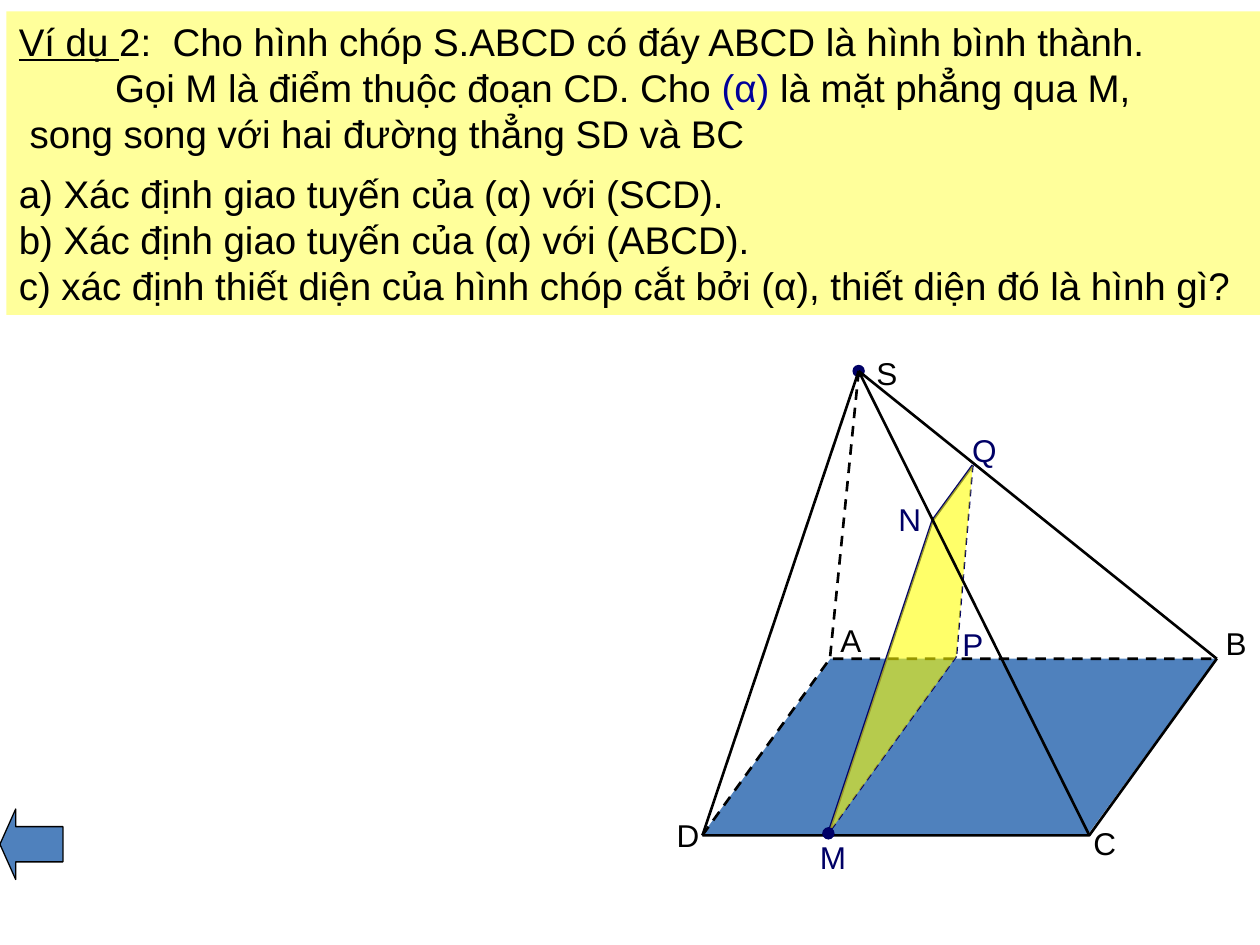
"""Build the slide on a section of the pyramid S.ABCD by a plane."""
from typing import NamedTuple

from lxml import etree
from pptx import Presentation
from pptx.dml.color import RGBColor
from pptx.enum.dml import MSO_LINE
from pptx.enum.shapes import MSO_CONNECTOR, MSO_SHAPE
from pptx.enum.text import MSO_ANCHOR, MSO_AUTO_SIZE, PP_ALIGN
from pptx.oxml.ns import qn
from pptx.util import Cm, Pt

DASH = MSO_LINE.DASH
STRAIGHT = MSO_CONNECTOR.STRAIGHT
RECTANGLE = MSO_SHAPE.RECTANGLE
PARALLELOGRAM = MSO_SHAPE.PARALLELOGRAM
OVAL = MSO_SHAPE.OVAL
LEFT_ARROW = MSO_SHAPE.LEFT_ARROW
TOP = MSO_ANCHOR.TOP
ALIGN_LEFT = PP_ALIGN.LEFT
GROW = MSO_AUTO_SIZE.SHAPE_TO_FIT_TEXT

BLACK, NAVY, BLUE = "000000", "000066", "4F81BD"
FONT = "Arial"


class Point(NamedTuple):
    x: float
    y: float


class Edge(NamedTuple):
    ends: str
    color: str = BLACK
    width: float = 1.5
    dashed: bool = False


class Label(NamedTuple):
    text: str
    left: float
    top: float
    color: str = BLACK
    wrap: bool = False


class Span(NamedTuple):
    text: str
    color: str = BLACK
    underline: bool = False


class Line(NamedTuple):
    spans: tuple[Span, ...]
    indent: float = 0
    spacing: float = 1.0


POINTS = {
    "S": Point(17.31, 7.48), "A": Point(16.73, 13.28), "B": Point(24.53, 13.28),
    "C": Point(21.96, 16.84), "D": Point(14.16, 16.84), "M": Point(16.7, 16.8),
    "N": Point(18.8, 10.49), "P": Point(19.28, 13.23), "Q": Point(19.61, 9.38),
}
BASE_EDGES = (Edge("DAB", dashed=True), Edge("DCB"))
SIDE_EDGES = (Edge("SA", dashed=True), Edge("SD"), Edge("SB"))
SECTION_EDGES = (
    Edge("PM", NAVY, 1, True), Edge("QP", NAVY, 1, True),
    Edge("MN", NAVY), Edge("NQ", NAVY),
)
LABELS = (
    Label("S", 17.42, 7.01, wrap=True), Label("A", 16.69, 12.4),
    Label("B", 24.46, 12.45), Label("C", 21.79, 16.48), Label("D", 13.39, 16.33),
    Label("M", 16.28, 16.76, NAVY), Label("P", 19.15, 12.47, NAVY),
    Label("N", 17.86, 9.96, NAVY), Label("Q", 19.35, 8.56, NAVY),
)
PROBLEM = (
    Line((Span("Ví dụ ", underline=True),
          Span("2:  Cho hình chóp S.ABCD có đáy ABCD là hình bình thành."))),
    Line((Span("Gọi M là điểm thuộc đoạn CD. Cho "), Span("(α)", "000099"),
          Span(" là mặt phẳng qua M,")), indent=1.94),
    Line((Span("song song với hai đường thẳng SD và BC"),), indent=0.22),
    Line((Span("a) Xác định giao tuyến của (α) với (SCD)."),), spacing=1.3),
    Line((Span("b) Xác định giao tuyến của (α) với (ABCD)."),)),
    Line((Span("c) xác định thiết diện của hình chóp cắt bởi (α), "
               "thiết diện đó là hình gì?"),)),
)


def paint(target, color: str) -> None:
    """Give a fill a solid hex colour."""
    target.solid()
    target.fore_color.rgb = RGBColor.from_string(color)


def style_line(line, edge: Edge) -> None:
    """Apply an edge's colour, width and dash."""
    paint(line.fill, edge.color)
    line.width = Pt(edge.width)
    if edge.dashed:
        line.dash_style = DASH


def add_preset(slide, kind, left: float, top: float, width: float, height: float,
               color: str, adjustments: tuple[float, ...] = ()):
    """Add a filled preset shape without outline or shadow."""
    shape = slide.shapes.add_shape(kind, Cm(left), Cm(top), Cm(width), Cm(height))
    shape.shadow.inherit = False
    paint(shape.fill, color)
    shape.line.fill.background()
    for index, value in enumerate(adjustments):
        shape.adjustments[index] = value
    return shape


def add_path(slide, names: str, closed: bool = False):
    """Add a freeform through the named points."""
    first, *others = [(Cm(POINTS[name].x), Cm(POINTS[name].y)) for name in names]
    builder = slide.shapes.build_freeform(*first)
    builder.add_line_segments(others, close=closed)
    shape = builder.convert_to_shape()
    shape.shadow.inherit = False
    return shape


def add_polyline(slide, edge: Edge) -> None:
    """Add an open, unfilled outline along several points."""
    shape = add_path(slide, edge.ends)
    shape.fill.background()
    style_line(shape.line, edge)


def add_edge(slide, edge: Edge) -> None:
    """Connect two named points."""
    start, end = (POINTS[name] for name in edge.ends)
    connector = slide.shapes.add_connector(
        STRAIGHT, Cm(start.x), Cm(start.y), Cm(end.x), Cm(end.y))
    style_line(connector.line, edge)
    etree.SubElement(connector._element.spPr, qn("a:effectLst"))


def add_section(slide) -> None:
    """Add the translucent section MNQP."""
    shape = add_path(slide, "NQPM", closed=True)
    paint(shape.fill, "FFFF00")
    shape.line.fill.background()
    color = shape._element.spPr.find(qn("a:solidFill"))[0]
    etree.SubElement(color, qn("a:alpha"), val="59000")


def add_dot(slide, center: Point) -> None:
    """Mark a point with a small disc."""
    size = 0.25
    add_preset(slide, OVAL, center.x - size / 2, center.y - size / 2, size, size, NAVY)


def add_label(slide, label: Label) -> None:
    """Add the letter of a point."""
    box = slide.shapes.add_textbox(Cm(label.left), Cm(label.top), Cm(1), Cm(1.02))
    box.text_frame.word_wrap = label.wrap
    box.text_frame.auto_size = GROW
    para = box.text_frame.paragraphs[0]
    para.text = label.text
    para.font.name, para.font.size = FONT, Pt(18)
    para.font.color.rgb = RGBColor.from_string(label.color)


def add_problem(slide, lines: tuple[Line, ...]) -> None:
    """Add the panel with the problem statement."""
    panel = add_preset(slide, RECTANGLE, 0.13, 0.23, 25.27, 6.12, "FFFF9B")
    frame = panel.text_frame
    frame.word_wrap, frame.auto_size, frame.vertical_anchor = True, GROW, TOP
    for index, line in enumerate(lines):
        para = frame.add_paragraph() if index else frame.paragraphs[0]
        para.alignment, para.line_spacing = ALIGN_LEFT, line.spacing
        para.font.name, para.font.size = FONT, Pt(22)
        para._p.get_or_add_pPr().set("marL", str(Cm(line.indent)))
        for span in line.spans:
            run = para.add_run()
            run.text = span.text
            run.font.underline = span.underline
            run.font.color.rgb = RGBColor.from_string(span.color)


def main() -> None:
    """Draw the slide and save the deck."""
    deck = Presentation()
    deck.slide_width, deck.slide_height = Cm(25.4), Cm(19.05)
    page = deck.slides.add_slide(deck.slide_layouts[6])
    add_problem(page, PROBLEM)
    add_preset(page, PARALLELOGRAM, 14.15, 13.28, 10.36, 3.56, BLUE, (0.728,))
    for edge in BASE_EDGES:
        add_polyline(page, edge)
    add_dot(page, POINTS["S"])
    for edge in SIDE_EDGES + SECTION_EDGES:
        add_edge(page, edge)
    add_section(page)
    add_edge(page, Edge("SC"))
    add_dot(page, POINTS["M"])
    for label in LABELS:
        add_label(page, label)
    arrow = add_preset(page, LEFT_ARROW, 0, 16.31, 1.27, 1.42, BLUE, (0.5, 0.25))
    style_line(arrow.line, Edge("", width=0.75))
    deck.save("out.pptx")


if __name__ == "__main__":
    main()
